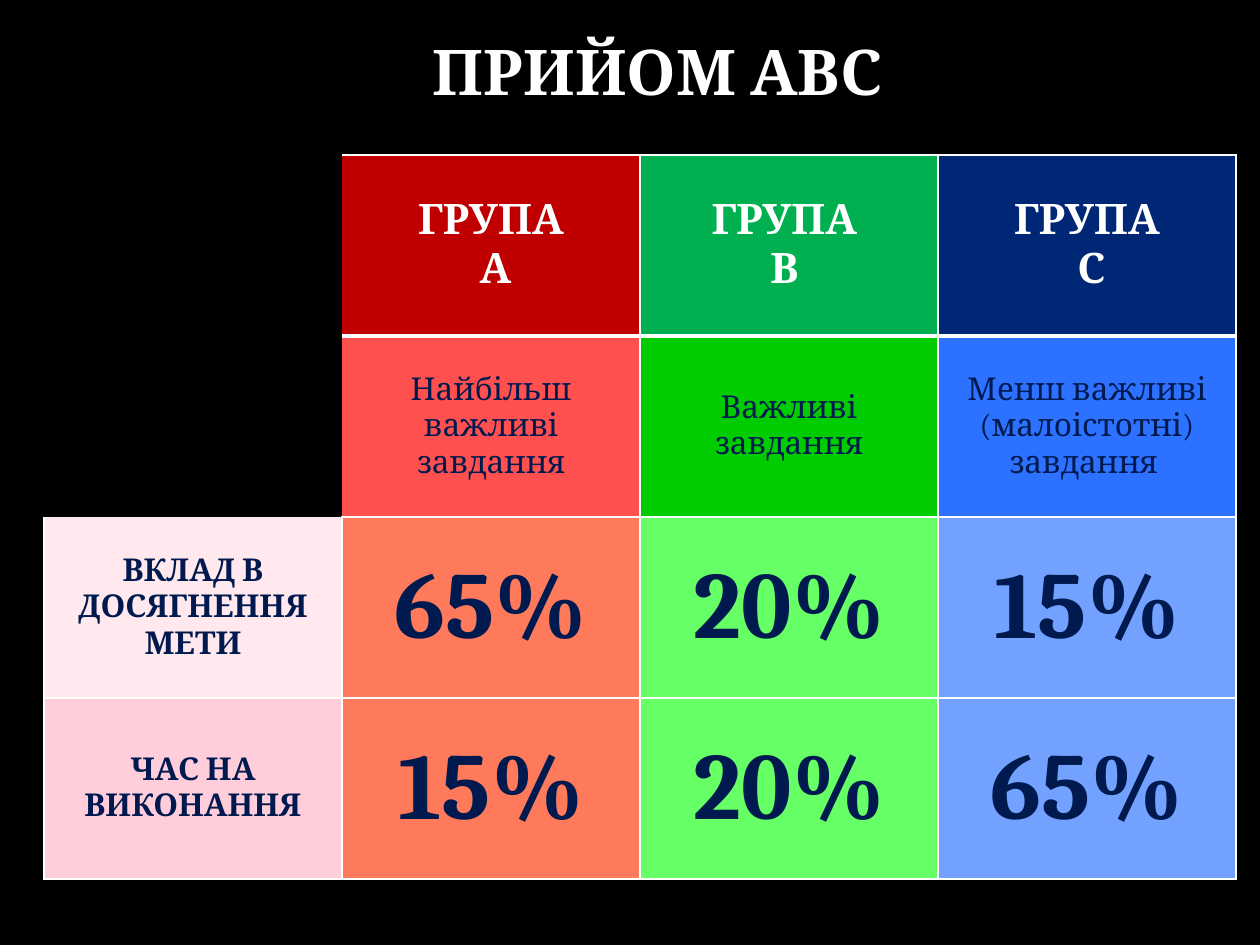
from dataclasses import dataclass

from lxml.etree import SubElement
from pptx import Presentation
from pptx.dml.color import RGBColor
from pptx.enum.text import MSO_ANCHOR, PP_ALIGN
from pptx.oxml.ns import qn
from pptx.util import Emu, Pt

PX = 914400 / 126


@dataclass(frozen=True)
class Theme:
    """Colours, type sizes and line widths of the slide."""
    font: str = "Cambria"
    background: str = "000000"
    light: str = "FFFFFF"
    dark: str = "001A4F"
    title_size: int = 36
    group_size: int = 24
    label_size: int = 18
    share_size: int = 54
    thin: int = 1
    thick: int = 3


@dataclass(frozen=True)
class TextStyle:
    """Size, colour and weight of one kind of text."""
    size: int
    color: str
    bold: bool = True


THEME = Theme()
TITLE = TextStyle(THEME.title_size, THEME.light)
GROUP = TextStyle(THEME.group_size, THEME.light)
TASK = TextStyle(THEME.label_size, THEME.dark, False)
LABEL = TextStyle(THEME.label_size, THEME.dark)
SHARE = TextStyle(THEME.share_size, THEME.dark)

ROWS = [
    [None,
     ("ГРУПА\n А", "C00000", GROUP),
     ("ГРУПА \nВ ", "00B050", GROUP),
     ("ГРУПА\n С", "002776", GROUP)],
    [None,
     ("Найбільш важливі завдання", "FF5050", TASK),
     ("Важливі завдання", "00CC00", TASK),
     ("Менш важливі (малоістотні)\nзавдання ", "2C71FF", TASK)],
    [("ВКЛАД В ДОСЯГНЕННЯ МЕТИ", "FFE8EE", LABEL),
     ("65%", "FF7A5B", SHARE),
     ("20%", "66FF66", SHARE),
     ("15%", "72A1FF", SHARE)],
    [("ЧАС НА ВИКОНАННЯ", "FFCEDA", LABEL),
     ("15%", "FF7A5B", SHARE),
     ("20%", "66FF66", SHARE),
     ("65%", "72A1FF", SHARE)],
]


def px(length):
    """Turn whole pixels into EMU."""
    return Emu(round(length * PX))


class SlideBuilder:
    """Draws styled elements on the current slide."""

    def __init__(self, deck, theme):
        """Add a title-only slide with the theme background."""
        self.theme = theme
        self.page = deck.slides.add_slide(deck.slide_layouts[5])
        fill = self.page.background.fill
        fill.solid()
        fill.fore_color.rgb = RGBColor.from_string(theme.background)

    def set_text(self, frame, text, style):
        """Fill a text frame with centred paragraphs in one style."""
        frame.text = text
        frame.word_wrap = True
        for para in frame.paragraphs:
            para.alignment = PP_ALIGN.CENTER
            para.font.name = self.theme.font
            para.font.size = Pt(style.size)
            para.font.bold = style.bold
            para.font.color.rgb = RGBColor.from_string(style.color)

    def title(self, text, left, top, width, height):
        """Place and format the title placeholder."""
        box = self.page.shapes.title
        box.left, box.top, box.width, box.height = map(px, (left, top, width, height))
        self.set_text(box.text_frame, text, TITLE)
        box.text_frame.vertical_anchor = MSO_ANCHOR.MIDDLE

    def border(self, cell, side, width):
        """Draw one cell edge, or hide it when the width is zero."""
        properties = cell._tc.get_or_add_tcPr()
        line = SubElement(properties, qn(f"a:ln{side}"), w=str(Pt(width)))
        if width:
            fill = SubElement(line, qn("a:solidFill"))
            SubElement(fill, qn("a:srgbClr"), val=self.theme.light)
        else:
            SubElement(line, qn("a:noFill"))

    def edge_width(self, rows, row, column, step):
        """Return the edge width towards the neighbouring cell."""
        beside_row, beside_column = row + step[0], column + step[1]
        inside = 0 <= beside_row < len(rows) and 0 <= beside_column < len(rows[0])
        if rows[row][column] is None or (inside and rows[beside_row][beside_column] is None):
            return 0
        return self.theme.thick if {row, beside_row} == {0, 1} else self.theme.thin

    def table(self, rows, left, top, column_width, row_height):
        """Add a table of equal cells, leaving the None cells bare."""
        width, height = column_width * len(rows[0]), row_height * len(rows)
        frame = self.page.shapes.add_table(
            len(rows), len(rows[0]), px(left), px(top), px(width), px(height))
        table = frame.table
        table.first_row = table.horz_banding = False
        sides = {"L": (0, -1), "R": (0, 1), "T": (-1, 0), "B": (1, 0)}
        for row, entries in enumerate(rows):
            for column, entry in enumerate(entries):
                cell = table.cell(row, column)
                for side, step in sides.items():
                    self.border(cell, side, self.edge_width(rows, row, column, step))
                if entry is None:
                    cell.fill.background()
                    continue
                text, color, style = entry
                cell.fill.solid()
                cell.fill.fore_color.rgb = RGBColor.from_string(color)
                cell.vertical_anchor = MSO_ANCHOR.MIDDLE
                self.set_text(cell.text_frame, text, style)


def main():
    """Build and save the slide."""
    deck = Presentation()
    deck.slide_width, deck.slide_height = px(1260), px(945)
    builder = SlideBuilder(deck, THEME)
    builder.title("ПРИЙОМ АВС", 134, 0, 1047, 140)
    builder.table(ROWS, 44, 155, 298, 181)
    deck.save("out.pptx")


if __name__ == "__main__":
    main()
